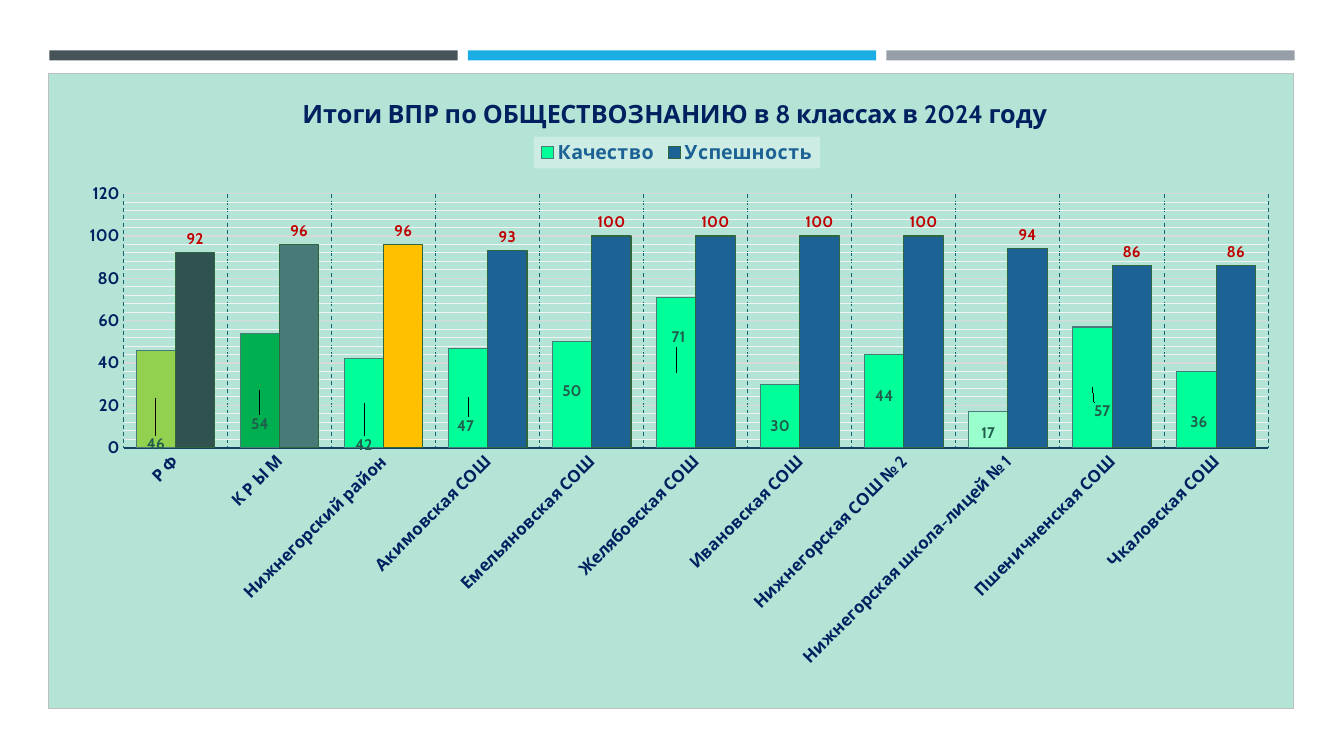
from lxml.etree import SubElement
from pptx import Presentation
from pptx.chart.data import CategoryChartData
from pptx.dml.color import RGBColor
from pptx.enum.chart import XL_CHART_TYPE as ChartType
from pptx.enum.chart import XL_LABEL_POSITION as LabelAt
from pptx.enum.chart import XL_LEGEND_POSITION as LegendAt
from pptx.enum.chart import XL_TICK_MARK as Tick
from pptx.enum.dml import MSO_LINE_DASH_STYLE as Dash
from pptx.enum.shapes import MSO_SHAPE as Shape
from pptx.oxml import parse_xml
from pptx.oxml.ns import nsdecls, qn
from pptx.util import Inches, Pt

COLORS = {
    "slate": "465359", "sky": "1CADE4", "gray": "969FA7",
    "mint": "B3E4D6", "border": "BFBFBF", "white": "FFFFFF",
    "navy": "002060", "axis": "134163", "divider": "13676C",
    "major": "D9D9D9", "minor": "F2F2F2", "blue": "1D6294",
    "spring": "00FF99", "lime": "92D050", "green": "00B050",
    "pale": "99FFCC", "teal": "487B78", "pine": "305250",
    "amber": "FFC000", "forest": "2F663E", "quality": "215D4C",
    "success": "C00000", "black": "000000",
}
WIDTH, HEIGHT = Inches(13.33), Inches(7.5)
SCHOOLS = [
    "Р Ф", "К Р Ы М", "Нижнегорский район", "Акимовская СОШ",
    "Емельяновская СОШ", "Желябовская СОШ", "Ивановская СОШ",
    "Нижнегорская СОШ № 2", "Нижнегорская школа-лицей № 1",
    "Пшеничненская СОШ", "Чкаловская СОШ",
]
RESULTS = {
    "Качество": {
        "values": [46, 54, 42, 47, 50, 71, 30, 44, 17, 57, 36],
        "fill": "spring", "line": "teal", "label": "quality",
        "points": {0: "lime", 1: "green", 8: "pale"},
        "position": LabelAt.CENTER,
        "shifts": [(0, 7.2), (0, 5.3), (0, 6.6), (-0.2, 4.4), (0, -0.6),
                   (0.2, -5.5), (0, 1.6), (0, -0.8), (0, 0.6), (0.8, 3.8),
                   (0.2, 2)],
    },
    "Успешность": {
        "values": [92, 96, 96, 93, 100, 100, 100, 100, 94, 86, 86],
        "fill": "blue", "line": "forest", "label": "success",
        "points": {0: "pine", 1: "teal", 2: "amber"},
        "position": LabelAt.OUTSIDE_END, "shifts": [],
    },
}


def color(name):
    """Return the named colour."""
    return RGBColor.from_string(COLORS[name])


def apply(target, **formats):
    """Set each format value on the target."""
    for key, value in formats.items():
        setattr(target, key, value)


def style_font(font, size, name, bold=True):
    """Set the face, size, weight and colour of a font."""
    apply(font, name="Cabin", size=Pt(size), bold=bold)
    font.color.rgb = color(name)


def style_fill(fill, name):
    """Make a fill solid in the named colour."""
    fill.solid()
    fill.fore_color.rgb = color(name)


def style_line(line, name, width=0.75):
    """Set the colour and width of a line."""
    line.color.rgb = color(name)
    line.width = Pt(width)


def place(parent, box, after=None, inner=False):
    """Give a chart part a manual layout in shares of the chart."""
    for old in parent.findall(qn("c:layout")):
        parent.remove(old)
    layout = parse_xml(f"<c:layout {nsdecls('c')}/>")
    manual = SubElement(layout, qn("c:manualLayout"))
    if inner:
        SubElement(manual, qn("c:layoutTarget")).set("val", "inner")
    if after != "c:idx":
        for mode in ("xMode", "yMode"):
            SubElement(manual, qn(f"c:{mode}")).set("val", "edge")
    for side, share in zip("xywh", box):
        SubElement(manual, qn(f"c:{side}")).set("val", f"{share:g}")
    if after:
        parent.find(qn(after)).addnext(layout)
    else:
        parent.insert(0, layout)


def edge_xml(name):
    """Return the XML of a thin line, or of none."""
    if not name:
        return "<a:ln><a:noFill/></a:ln>"
    return (f'<a:ln w="{Pt(0.75)}"><a:solidFill><a:srgbClr val="{COLORS[name]}"/>'
            "</a:solidFill></a:ln>")


def area_format(fill=None, alpha=100, border=None):
    """Return the fill and border properties of a chart part."""
    paint = (f'<a:solidFill><a:srgbClr val="{COLORS[fill]}"><a:alpha '
             f'val="{alpha * 1000}"/></a:srgbClr></a:solidFill>') if fill else ""
    return parse_xml(
        f'<c:spPr {nsdecls("c", "a")}>{paint}{edge_xml(border)}</c:spPr>')


def add_bands(slide):
    """Add the three coloured bands along the top."""
    for column, name in enumerate(("slate", "sky", "gray")):
        band = slide.shapes.add_shape(
            Shape.RECTANGLE, Inches(0.49 + 4.15 * column), Inches(0.5),
            Inches(4.05), Inches(0.1))
        band.shadow.inherit = False
        style_fill(band.fill, name)
        band.line.fill.background()


def style_series(series, result):
    """Colour the bars of a series and set its value labels."""
    style_fill(series.format.fill, result["fill"])
    style_line(series.format.line, result["line"])
    for index, name in result["points"].items():
        bar = series.points[index].format
        style_fill(bar.fill, name)
        style_line(bar.line, result["line"])
    labels = series.data_labels
    apply(labels, show_value=True, number_format="0",
          number_format_is_linked=False, position=result["position"])
    style_font(labels.font, 11, result["label"])
    for index in range(len(result["shifts"])):
        label = series.points[index].data_label
        style_font(label.font, 11, result["label"])
        label.position = result["position"]
    for mark, shift in zip(labels._element.findall(qn("c:dLbl")),
                           result["shifts"]):
        place(mark, [part / 100 for part in shift], "c:idx")


def style_axes(chart):
    """Format both axes and their gridlines."""
    schools, scale = chart.category_axis, chart.value_axis
    for axis, grid in ((schools, "divider"), (scale, "major")):
        apply(axis, has_major_gridlines=True, major_tick_mark=Tick.NONE,
              minor_tick_mark=Tick.NONE)
        style_font(axis.tick_labels.font, 12, "navy")
        style_line(axis.major_gridlines.format.line, grid)
    schools.major_gridlines.format.line.dash_style = Dash.DASH
    style_line(schools.format.line, "axis", 1.5)
    turned = schools._element.find(qn("c:txPr")).find(qn("a:bodyPr"))
    turned.set("rot", "-2700000")
    turned.set("vert", "horz")
    apply(scale, minimum_scale=0, maximum_scale=120, major_unit=20,
          minor_unit=4, has_minor_gridlines=True)
    scale._element.find(qn("c:minorGridlines")).append(area_format(border="minor"))
    scale.format.line.fill.background()
    apply(scale.tick_labels, number_format="0", number_format_is_linked=False)


def style_heading(chart):
    """Set the title and the legend under it."""
    heading = chart.chart_title.text_frame
    heading.text = "Итоги ВПР по ОБЩЕСТВОЗНАНИЮ в 8 классах в 2024 году"
    style_font(heading.paragraphs[0].runs[0].font, 18, "navy")
    place(chart.chart_title._element, (0.2, 0.03), "c:tx")
    chart.has_legend = True
    legend = chart.legend
    apply(legend, position=LegendAt.TOP, include_in_layout=False)
    style_font(legend.font, 14, "blue")
    place(legend._element, (0.39, 0.1, 0.23, 0.05), "c:legendPos")
    legend._element.find(qn("c:overlay")).addnext(area_format("white", 35))


def add_results_chart(slide):
    """Add the chart of quality and success by school."""
    data = CategoryChartData(number_format="0")
    data.categories = SCHOOLS
    for name, result in RESULTS.items():
        data.add_series(name, result["values"])
    chart = slide.shapes.add_chart(
        ChartType.COLUMN_CLUSTERED, Inches(0.48), Inches(0.72),
        Inches(12.35), Inches(6.31), data).chart
    style_font(chart.font, 10, "black", False)
    style_heading(chart)
    style_axes(chart)
    plot = chart.plots[0]
    apply(plot, gap_width=65, overlap=0, vary_by_categories=False)
    for series, result in zip(plot.series, RESULTS.values()):
        style_series(series, result)
    body = chart._chartSpace.find(qn("c:chart"))
    place(body.find(qn("c:plotArea")), (0.06, 0.19, 0.92, 0.4), inner=True)
    body.addnext(area_format("mint", border="border"))


def main():
    """Build the slide and save it."""
    deck = Presentation()
    apply(deck, slide_width=WIDTH, slide_height=HEIGHT)
    slide = deck.slides.add_slide(deck.slide_layouts[6])
    add_bands(slide)
    add_results_chart(slide)
    deck.save("out.pptx")


if __name__ == "__main__":
    main()
